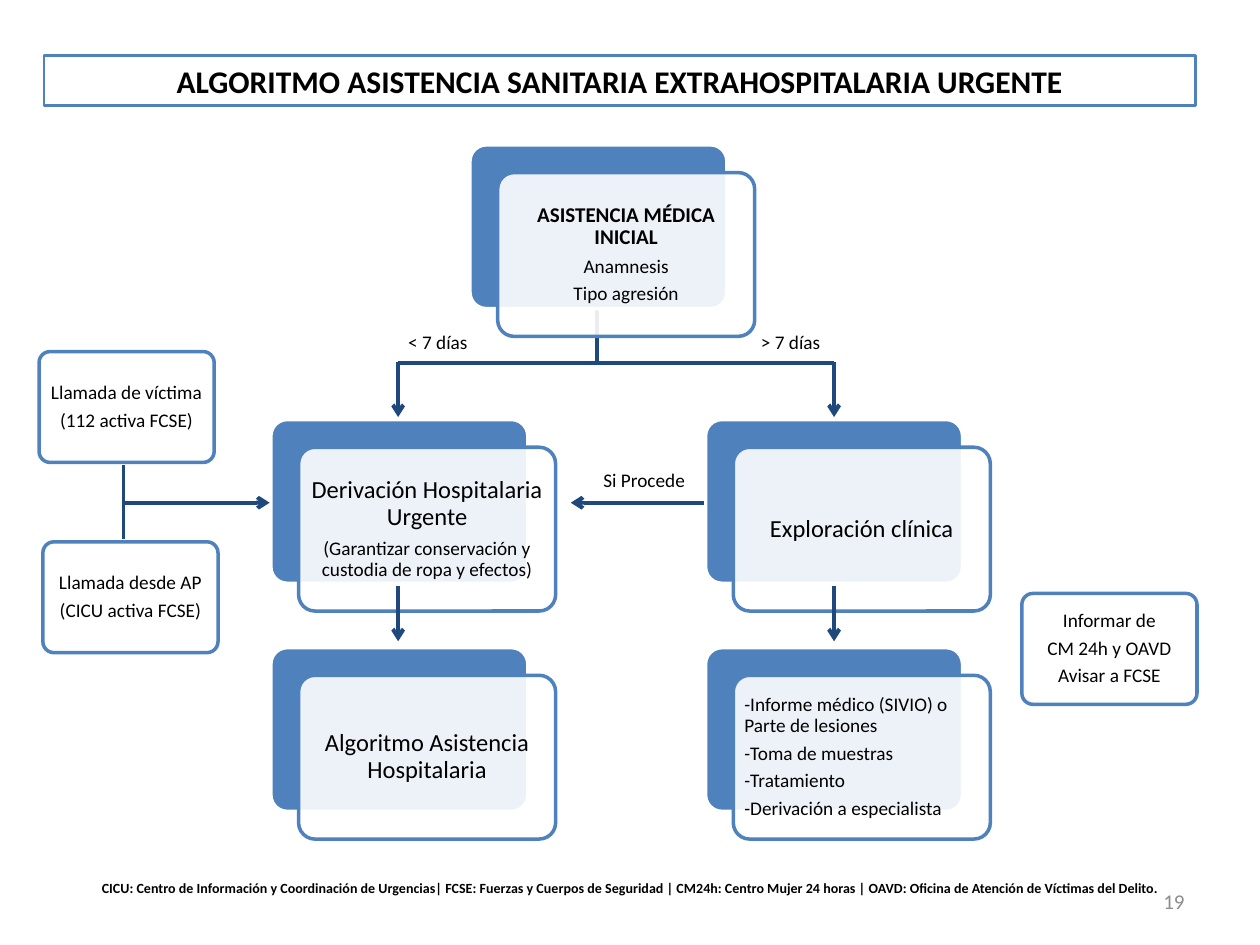
from dataclasses import dataclass
from typing import NamedTuple

from lxml.etree import SubElement
from pptx import Presentation
from pptx.dml.color import RGBColor
from pptx.enum.shapes import MSO_CONNECTOR as Connector, MSO_SHAPE as Preset
from pptx.enum.text import MSO_ANCHOR as Anchor, PP_ALIGN as Align
from pptx.oxml.ns import qn
from pptx.util import Emu, Pt

PX = 9144  # one px is a hundredth of an inch


@dataclass(frozen=True)
class Theme:
    font: str = "Calibri"
    blue: RGBColor = RGBColor(0x4F, 0x81, 0xBD)
    navy: RGBColor = RGBColor(0x1F, 0x49, 0x7D)
    white: RGBColor = RGBColor(0xFF, 0xFF, 0xFF)
    black: RGBColor = RGBColor(0, 0, 0)
    grey: RGBColor = RGBColor(0x8C, 0x8C, 0x8C)
    title: int = 18
    heading: int = 14
    lead: int = 12
    body: int = 11
    note: int = 8
    border: float = 2
    title_border: float = 1.5
    connector: float = 2.25
    card_opacity: int = 90


THEME = Theme()


class Box(NamedTuple):
    left: int
    top: int
    width: int
    height: int


class Line(NamedTuple):
    text: str
    size: int = THEME.body
    bold: bool = False
    color: RGBColor = THEME.black


class Card(NamedTuple):
    box: Box
    lines: list[Line]
    align: Align = Align.CENTER
    has_backing: bool = False


class Label(NamedTuple):
    box: Box
    line: Line
    align: Align = Align.LEFT
    anchor: Anchor = Anchor.TOP
    wrap: bool = False


class Link(NamedTuple):
    x1: int
    y1: int
    x2: int
    y2: int
    arrow: bool = False


STEP_WIDTH, STEP_HEIGHT = 204, 130
BACKING_SHIFT = 22
CALL_WIDTH, CALL_HEIGHT = 139, 88
LEFT_COLUMN, RIGHT_COLUMN = 237, 582
UPPER_ROW, LOWER_ROW = 355, 536
LEFT_AXIS, RIGHT_AXIS, CALL_AXIS = 316, 662, 98
BRANCH_Y, MIDDLE_Y = 288, 399


def step(left: int, top: int, lines: list[Line], align: Align = Align.CENTER) -> Card:
    return Card(Box(left, top, STEP_WIDTH, STEP_HEIGHT), lines, align, has_backing=True)


def call(left: int, top: int, *texts: str) -> Card:
    return Card(Box(left, top, CALL_WIDTH, CALL_HEIGHT), [Line(text) for text in texts])


CARDS = [
    step(395, 137, [Line("ASISTENCIA MÉDICA INICIAL", THEME.lead, True),
                    Line("Anamnesis"), Line("Tipo agresión")]),
    step(LEFT_COLUMN, UPPER_ROW, [
        Line("Derivación Hospitalaria Urgente", THEME.heading),
        Line("(Garantizar conservación y custodia de ropa y efectos)")]),
    step(LEFT_COLUMN, LOWER_ROW, [Line("Algoritmo Asistencia Hospitalaria", THEME.heading)]),
    step(RIGHT_COLUMN, UPPER_ROW, [Line("Exploración clínica", THEME.heading)]),
    step(RIGHT_COLUMN, LOWER_ROW, [
        Line("-Informe médico (SIVIO) o Parte de lesiones"), Line("-Toma de muestras"),
        Line("-Tratamiento"), Line("-Derivación a especialista")], Align.LEFT),
    call(31, 279, "Llamada de víctima", "(112 activa FCSE)"),
    call(34, 430, "Llamada desde AP", "(CICU activa FCSE)"),
    call(811, 471, "Informar de", "CM 24h y OAVD", "Avisar a FCSE"),
]

STEM = Link(474, BRANCH_Y, 474, 244)
LINKS = [
    Link(LEFT_AXIS, BRANCH_Y, RIGHT_AXIS, BRANCH_Y),
    *(Link(axis, top, axis, top + 44, True)
      for axis in (LEFT_AXIS, RIGHT_AXIS) for top in (287, 465)),
    Link(559, MIDDLE_Y, 453, MIDDLE_Y, True),
    Link(CALL_AXIS, 369, CALL_AXIS, 428),
    Link(CALL_AXIS, MIDDLE_Y, 214, MIDDLE_Y, True),
]

TITLE = Label(Box(35, 44, 914, 40),
              Line("ALGORITMO ASISTENCIA SANITARIA EXTRAHOSPITALARIA URGENTE", THEME.title, True),
              Align.CENTER, wrap=True)
LABELS = [
    Label(Box(469, 367, 86, 29), Line("Si Procede")),
    Label(Box(314, 257, 68, 29), Line("< 7 días")),
    Label(Box(594, 257, 68, 29), Line("> 7 días")),
    Label(Box(71, 693, 866, 24),
          Line("CICU: Centro de Información y Coordinación de Urgencias| "
               "FCSE: Fuerzas y Cuerpos de Seguridad | CM24h: Centro Mujer 24 horas | "
               "OAVD: Oficina de Atención de Víctimas del Delito.", THEME.note, True)),
    Label(Box(717, 695, 233, 40), Line("19", THEME.lead, color=THEME.grey),
          Align.RIGHT, Anchor.MIDDLE, True),
]


def to_emu(lengths: tuple[int, ...]) -> list[Emu]:
    return [Emu(length * PX) for length in lengths]


def write_line(paragraph, line: Line, align: Align) -> None:
    paragraph.alignment = align
    run = paragraph.add_run()
    run.text = line.text
    run.font.name = THEME.font
    run.font.size = Pt(line.size)
    run.font.bold = line.bold
    run.font.color.rgb = line.color


def draw_rounded(slide, box: Box, fill: RGBColor, border: RGBColor):
    shape = slide.shapes.add_shape(Preset.ROUNDED_RECTANGLE, *to_emu(box))
    shape.adjustments[0] = 0.1
    shape.shadow.inherit = False
    shape.fill.solid()
    shape.fill.fore_color.rgb = fill
    shape.line.color.rgb = border
    shape.line.width = Pt(THEME.border)
    return shape


def draw_card(slide, card: Card) -> None:
    if card.has_backing:
        backing = card.box._replace(left=card.box.left - BACKING_SHIFT,
                                    top=card.box.top - BACKING_SHIFT)
        draw_rounded(slide, backing, THEME.blue, THEME.white)
    shape = draw_rounded(slide, card.box, THEME.white, THEME.blue)
    color = shape.fill._xPr.find(qn("a:solidFill"))[0]
    SubElement(color, qn("a:alpha"), val=str(THEME.card_opacity * 1000))
    frame = shape.text_frame
    frame.word_wrap = True
    frame.vertical_anchor = Anchor.MIDDLE
    frame.margin_left = frame.margin_right = Emu(5 * PX)
    frame.margin_top = frame.margin_bottom = Emu(5 * PX)
    for index, line in enumerate(card.lines):
        paragraph = frame.add_paragraph() if index else frame.paragraphs[0]
        paragraph.line_spacing = 0.9
        paragraph.space_after = Pt(0.35 * line.size)
        write_line(paragraph, line, card.align)


def draw_label(slide, label: Label):
    shape = slide.shapes.add_textbox(*to_emu(label.box))
    frame = shape.text_frame
    frame.word_wrap = label.wrap
    frame.vertical_anchor = label.anchor
    write_line(frame.paragraphs[0], label.line, label.align)
    return shape


def draw_link(slide, link: Link) -> None:
    connector = slide.shapes.add_connector(Connector.STRAIGHT, *to_emu(link[:4]))
    connector.line.color.rgb = THEME.navy
    connector.line.width = Pt(THEME.connector)
    if link.arrow:
        SubElement(connector.line._get_or_add_ln(), qn("a:tailEnd"), type="arrow")
    SubElement(connector._element.spPr, qn("a:effectLst"))


def main() -> None:
    presentation = Presentation()
    presentation.slide_width, presentation.slide_height = to_emu((1000, 750))
    slide = presentation.slides.add_slide(presentation.slide_layouts[6])
    draw_link(slide, STEM)
    for card in CARDS:
        draw_card(slide, card)
    for link in LINKS:
        draw_link(slide, link)
    title = draw_label(slide, TITLE)
    title.line.color.rgb = THEME.blue
    title.line.width = Pt(THEME.title_border)
    for label in LABELS:
        draw_label(slide, label)
    presentation.save("out.pptx")


if __name__ == "__main__":
    main()
